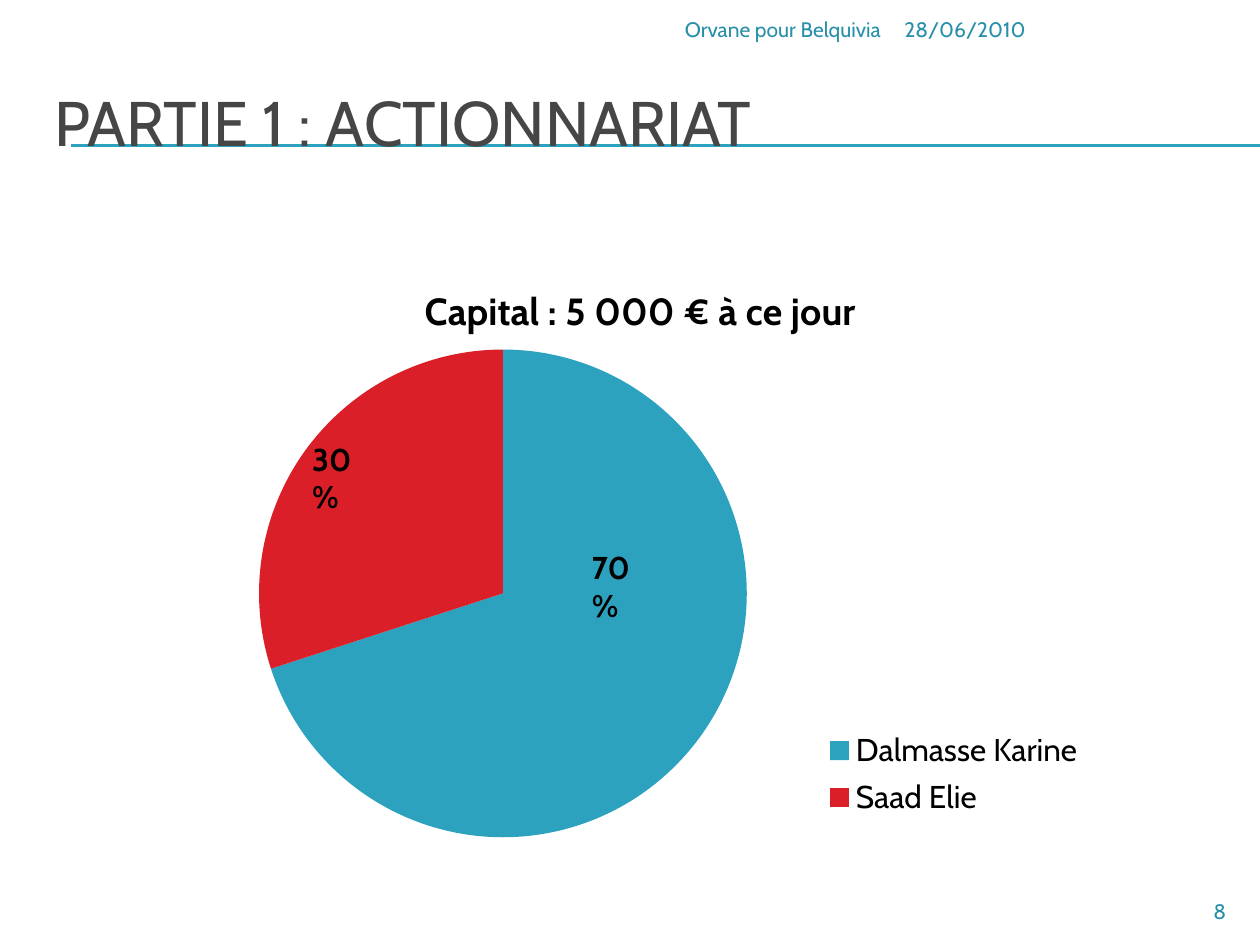
from dataclasses import dataclass

from lxml.etree import SubElement
from pptx import Presentation
from pptx.chart.data import CategoryChartData
from pptx.dml.color import RGBColor
from pptx.enum.chart import XL_CHART_TYPE, XL_LEGEND_POSITION
from pptx.enum.shapes import MSO_CONNECTOR
from pptx.enum.text import MSO_ANCHOR, PP_ALIGN
from pptx.oxml.ns import qn
from pptx.util import Inches, Pt


@dataclass(frozen=True)
class Theme:
    font: str = "Cabin"
    accent: str = "2DA2BF"
    contrast: str = "DA1F28"
    heading: str = "464646"
    footer: str = "288FA9"
    ink: str = "000000"
    title_size: float = 36
    chart_title_size: float = 21.6
    body_size: float = 18
    footer_size: float = 12


def format_font(font, size, color, bold=False, name=Theme.font):
    font.name = name
    font.size = Pt(size)
    font.bold = bold
    font.color.rgb = RGBColor.from_string(color)


def write_text(frame, text, size, color, bold=False,
               align=PP_ALIGN.LEFT, anchor=MSO_ANCHOR.TOP):
    frame.word_wrap = True
    frame.vertical_anchor = anchor
    paragraph = frame.paragraphs[0]
    paragraph.alignment = align
    run = paragraph.add_run()
    run.text = text
    format_font(run.font, size, color, bold)


def set_layout(element, inner=False, **fractions):
    for old in element.findall(qn("c:layout")):
        element.remove(old)
    layout = SubElement(element, qn("c:layout"))
    overlay = element.find(qn("c:overlay"))
    element.insert(0 if overlay is None else element.index(overlay), layout)
    manual = SubElement(layout, qn("c:manualLayout"))
    settings = {"layoutTarget": "inner"} if inner else {}
    settings.update(xMode="edge", yMode="edge", **fractions)
    for name, value in settings.items():
        SubElement(manual, qn(f"c:{name}")).set("val", str(value))


class SlideBuilder:
    def __init__(self, presentation, theme):
        self.theme = theme
        self.slide = presentation.slides.add_slide(presentation.slide_layouts[5])

    def rule(self, left, right, top):
        line = self.slide.shapes.add_connector(
            MSO_CONNECTOR.STRAIGHT, Inches(left), Inches(top), Inches(right), Inches(top))
        line.line.color.rgb = RGBColor.from_string(self.theme.accent)
        line.line.width = Pt(0.75)
        SubElement(line.element.spPr, qn("a:effectLst"))

    def title(self, text, left, top, width, height):
        shape = self.slide.shapes.title
        shape.left, shape.top = Inches(left), Inches(top)
        shape.width, shape.height = Inches(width), Inches(height)
        write_text(shape.text_frame, text, size=self.theme.title_size,
                   color=self.theme.heading, anchor=MSO_ANCHOR.MIDDLE)
        self.slide.shapes.element.append(shape.element)

    def text(self, text, left, top, width, height, **style):
        box = self.slide.shapes.add_textbox(
            Inches(left), Inches(top), Inches(width), Inches(height))
        write_text(box.text_frame, text, **style)

    def footer(self, text, left, top, width, height, align=PP_ALIGN.LEFT):
        self.text(text, left, top, width, height, size=self.theme.footer_size,
                  color=self.theme.footer, align=align)

    def share_label(self, text, left, top):
        self.text(text, left, top, 0.74, 0.4, size=self.theme.body_size,
                  color=self.theme.ink, bold=True)

    def pie(self, title, shares, left, top, width, height):
        theme = self.theme
        data = CategoryChartData()
        data.categories = list(shares)
        data.add_series("Series 1", list(shares.values()))
        chart = self.slide.shapes.add_chart(
            XL_CHART_TYPE.PIE, Inches(left), Inches(top),
            Inches(width), Inches(height), data).chart
        format_font(chart.font, theme.body_size, theme.ink)
        chart.has_title = True
        write_text(chart.chart_title.text_frame, title, size=theme.chart_title_size,
                   color=theme.ink, bold=True, align=PP_ALIGN.CENTER)
        chart.chart_title.include_in_layout = False
        chart.has_legend = True
        chart.legend.position = XL_LEGEND_POSITION.RIGHT
        chart.legend.include_in_layout = False
        format_font(chart.legend.font, theme.body_size, theme.ink)
        plot = chart.plots[0]
        plot.vary_by_categories = True
        for index, color in enumerate((theme.accent, theme.contrast)):
            point = plot.series[0].points[index]
            point.format.fill.solid()
            point.format.fill.fore_color.rgb = RGBColor.from_string(color)
            point.format.line.fill.background()
        root = chart.element.find(qn("c:chart"))
        set_layout(root.find(qn("c:title")), x=0.28, y=0.04)
        set_layout(root.find(qn("c:plotArea")), inner=True, x=0.12, y=0.16, w=0.49, h=0.81)
        set_layout(root.find(qn("c:legend")), x=0.68, y=0.78, w=0.27, h=0.17)


def main():
    presentation = Presentation()
    presentation.slide_width, presentation.slide_height = Inches(10), Inches(7.5)
    builder = SlideBuilder(presentation, Theme())
    for top in (1.15, 1.16):
        builder.rule(0.56, 10, top)
    builder.title("PARTIE 1 : ACTIONNARIAT", 0.33, 0.5, 9.5, 0.92)
    shares = {"Dalmasse Karine": 70, "Saad Elie": 30}
    builder.pie("Capital : 5 000 € à ce jour", shares, 1.09, 2.01, 7.95, 4.78)
    builder.footer("28/06/2010", 7.08, 0.08, 2.75, 0.32)
    builder.footer("Orvane pour Belquivia", 3.92, 0.08, 3.17, 0.32, align=PP_ALIGN.RIGHT)
    for value, (left, top) in zip(shares.values(), ((4.6, 4.3), (2.38, 3.44))):
        builder.share_label(f"{value} %", left, top)
    builder.footer("8", 9, 7.08, 0.83, 0.27, align=PP_ALIGN.RIGHT)
    presentation.save("out.pptx")


if __name__ == "__main__":
    main()
